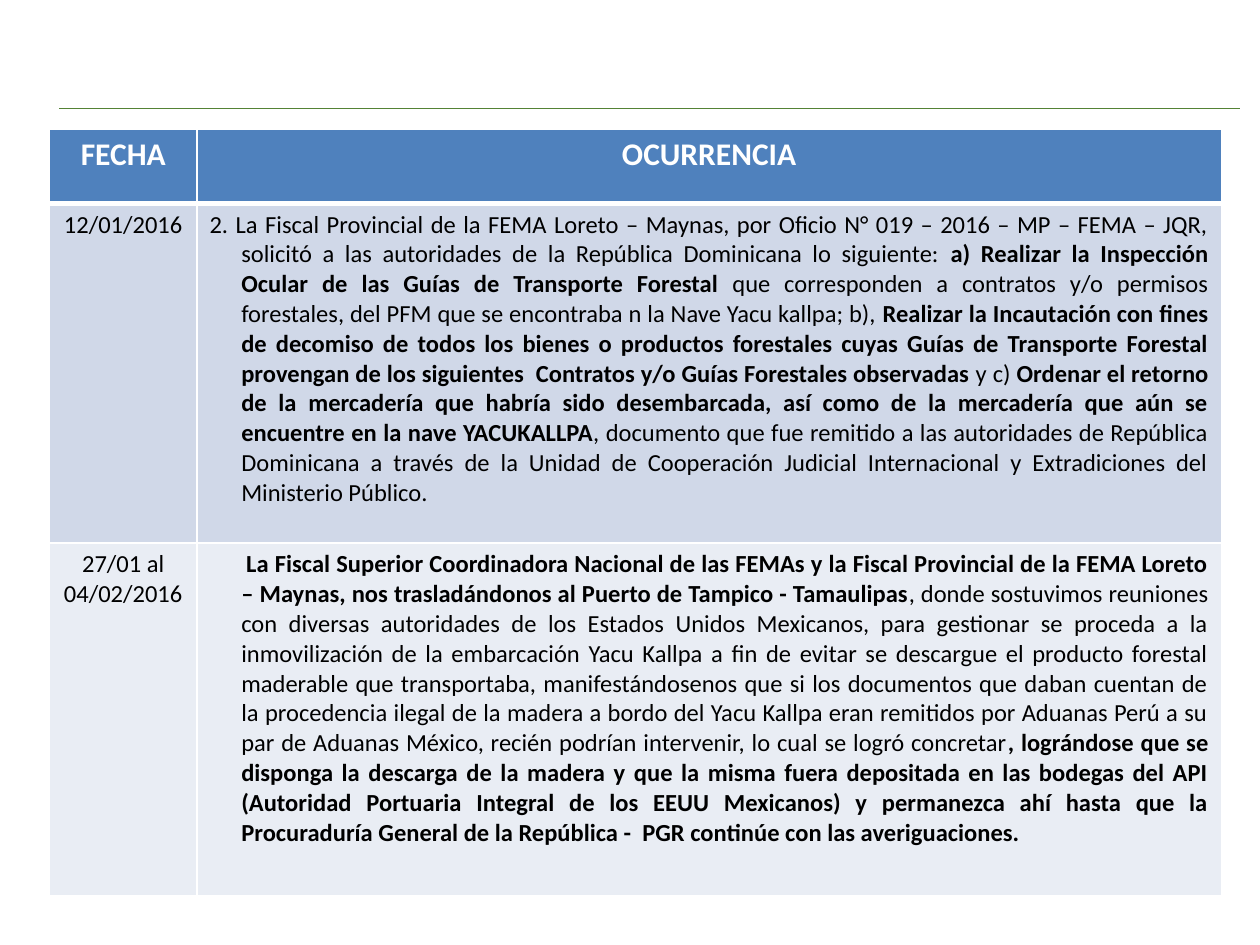
from lxml import etree
from pptx import Presentation
from pptx import util as u
from pptx.dml.color import RGBColor
from pptx.enum import shapes, text
from pptx.oxml.ns import qn

WHITE = RGBColor(0xFF, 0xFF, 0xFF)
BLACK = RGBColor(0x00, 0x00, 0x00)
GREEN = RGBColor(0x54, 0x82, 0x35)
BLUE = RGBColor(0x4F, 0x81, 0xBD)
BAND_DARK = RGBColor(0xD0, 0xD8, 0xE8)
BAND_LIGHT = RGBColor(0xE9, 0xED, 0xF4)
CENTER = text.PP_ALIGN.CENTER
JUSTIFY = text.PP_ALIGN.JUSTIFY


def add_borders(cell, bottom_width):
    properties = cell._tc.get_or_add_tcPr()
    for position, side in enumerate(("lnL", "lnR", "lnT", "lnB")):
        width = bottom_width if side == "lnB" else 1
        line = etree.Element(qn("a:" + side), w=str(u.Pt(width)))
        fill = etree.SubElement(line, qn("a:solidFill"))
        etree.SubElement(fill, qn("a:srgbClr"), val=str(WHITE))
        properties.insert(position, line)


def write_cell(cell, spans, size, color, align):
    para = cell.text_frame.paragraphs[0]
    para.alignment = align
    for words, bold in spans:
        span = para.add_run()
        span.text = words
        span.font.name = "Calibri"
        span.font.size = u.Pt(size)
        span.font.bold = bold
        span.font.color.rgb = color
    return para


request = [
    ("2. La Fiscal Provincial de la FEMA Loreto – Maynas, por Oficio N° 019 – 2016 – MP – FEMA – JQR, "
     "solicitó a las autoridades de la República Dominicana lo siguiente: ", False),
    ("a) Realizar la Inspección Ocular de las Guías de Transporte Forestal ", True),
    ("que corresponden a contratos y/o permisos forestales, del PFM que se encontraba n la Nave "
     "Yacu kallpa; b),", False),
    (" Realizar la Incautación con fines de decomiso de todos los bienes o productos forestales cuyas "
     "Guías de Transporte Forestal provengan de los siguientes  Contratos y/o Guías Forestales "
     "observadas", True),
    (" y c) ", False),
    ("Ordenar el retorno de la mercadería que habría sido desembarcada, así como de la mercadería "
     "que aún se encuentre en la nave YACUKALLPA", True),
    (", documento que fue remitido a las autoridades de República Dominicana a través de la Unidad de "
     "Cooperación Judicial Internacional y Extradiciones del Ministerio Público.", False),
]
journey = [
    ("La Fiscal Superior Coordinadora Nacional de las FEMAs y la Fiscal Provincial de la FEMA Loreto – "
     "Maynas, nos trasladándonos al Puerto de Tampico - Tamaulipas", True),
    (", donde sostuvimos reuniones con diversas autoridades de los Estados Unidos Mexicanos, para "
     "gestionar se proceda a la inmovilización de la embarcación Yacu Kallpa a fin de evitar se "
     "descargue el producto forestal maderable que transportaba, manifestándosenos que si los "
     "documentos que daban cuentan de la procedencia ilegal de la madera a bordo del Yacu Kallpa eran "
     "remitidos por Aduanas Perú a su par de Aduanas México, recién podrían intervenir, lo cual se "
     "logró concretar", False),
    (", lográndose que se disponga la descarga de la madera y que la misma fuera depositada en las "
     "bodegas del API (Autoridad Portuaria Integral de los EEUU Mexicanos) y permanezca ahí hasta que "
     "la Procuraduría General de la República -  PGR continúe con las averiguaciones.", True),
]
events = [
    ("12/01/2016", request, BAND_DARK, u.Cm(-0.64)),
    ("27/01 al 04/02/2016", journey, BAND_LIGHT, u.Cm(0.1)),
]

deck = Presentation()
deck.slide_width, deck.slide_height = u.Cm(25.4), u.Cm(19.05)
page = deck.slides.add_slide(deck.slide_layouts[6])

rule = page.shapes.add_connector(
    shapes.MSO_CONNECTOR.STRAIGHT, u.Cm(1.19), u.Cm(2.18), u.Cm(25), u.Cm(2.18))
rule.line.color.rgb = GREEN
rule.line.width = u.Pt(0.5)
etree.SubElement(rule._element.spPr, qn("a:effectLst"))

table = page.shapes.add_table(3, 2, u.Cm(1), u.Cm(2.6), u.Cm(23.62), u.Cm(15.3)).table
for column, width in zip(table.columns, (2.97, 20.65)):
    column.width = u.Cm(width)
for row, height in zip(table.rows, (1.5, 6.85, 7.1)):
    row.height = u.Cm(height)

for cell, heading in zip(table.rows[0].cells, ("FECHA", "OCURRENCIA")):
    write_cell(cell, [(heading, True)], 18, WHITE, CENTER)
    cell.fill.solid()
    cell.fill.fore_color.rgb = BLUE
    add_borders(cell, 3)

for number, (date, story, band, indent) in enumerate(events, start=1):
    date_cell, story_cell = table.rows[number].cells
    write_cell(date_cell, [(date, False)], 14, BLACK, CENTER)
    para = write_cell(story_cell, story, 14, BLACK, JUSTIFY)
    properties = para._p.get_or_add_pPr()
    properties.set("marL", str(u.Cm(0.64)))
    properties.set("indent", str(indent))
    for cell in (date_cell, story_cell):
        cell.fill.solid()
        cell.fill.fore_color.rgb = band
        add_borders(cell, 1)

deck.save("out.pptx")
